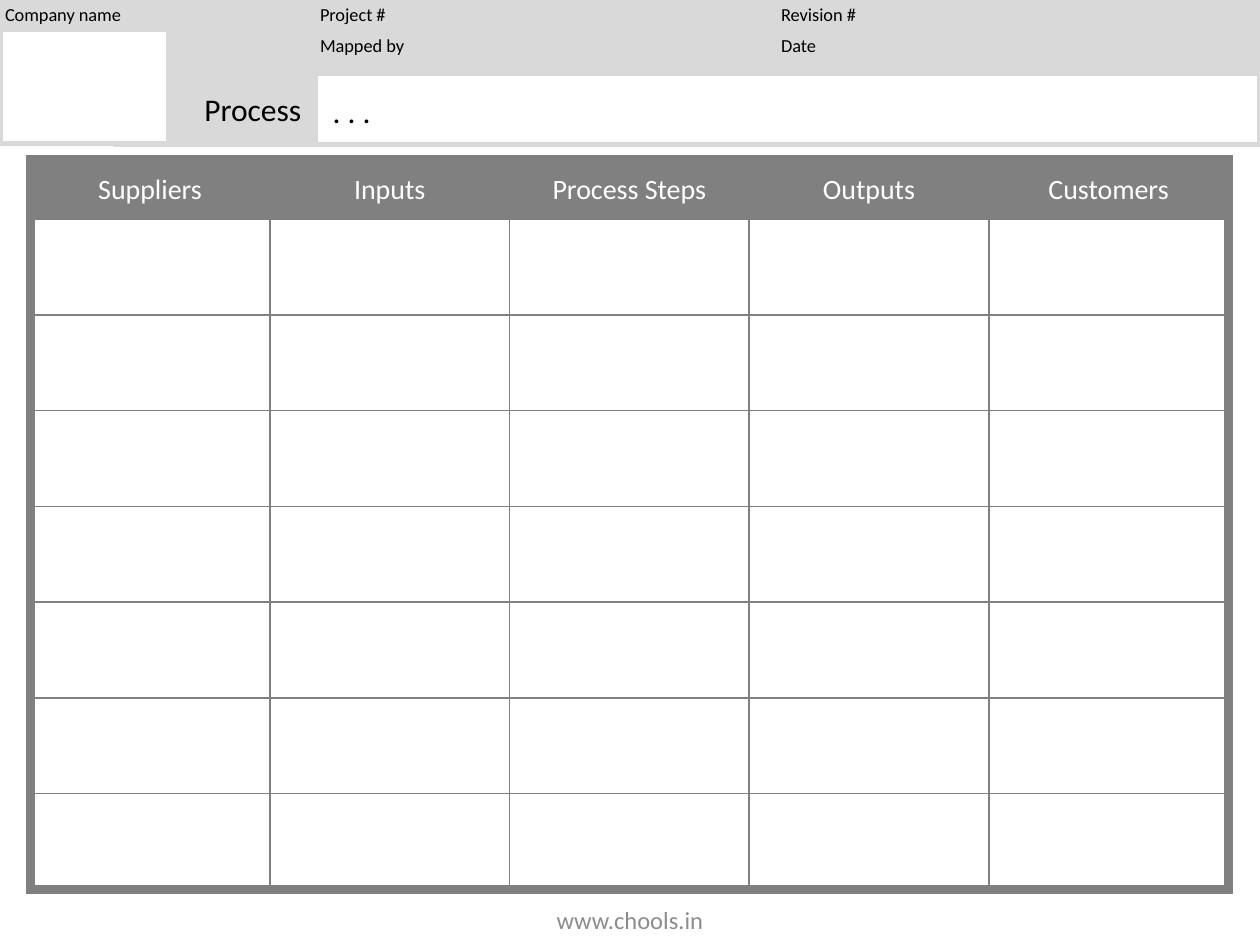
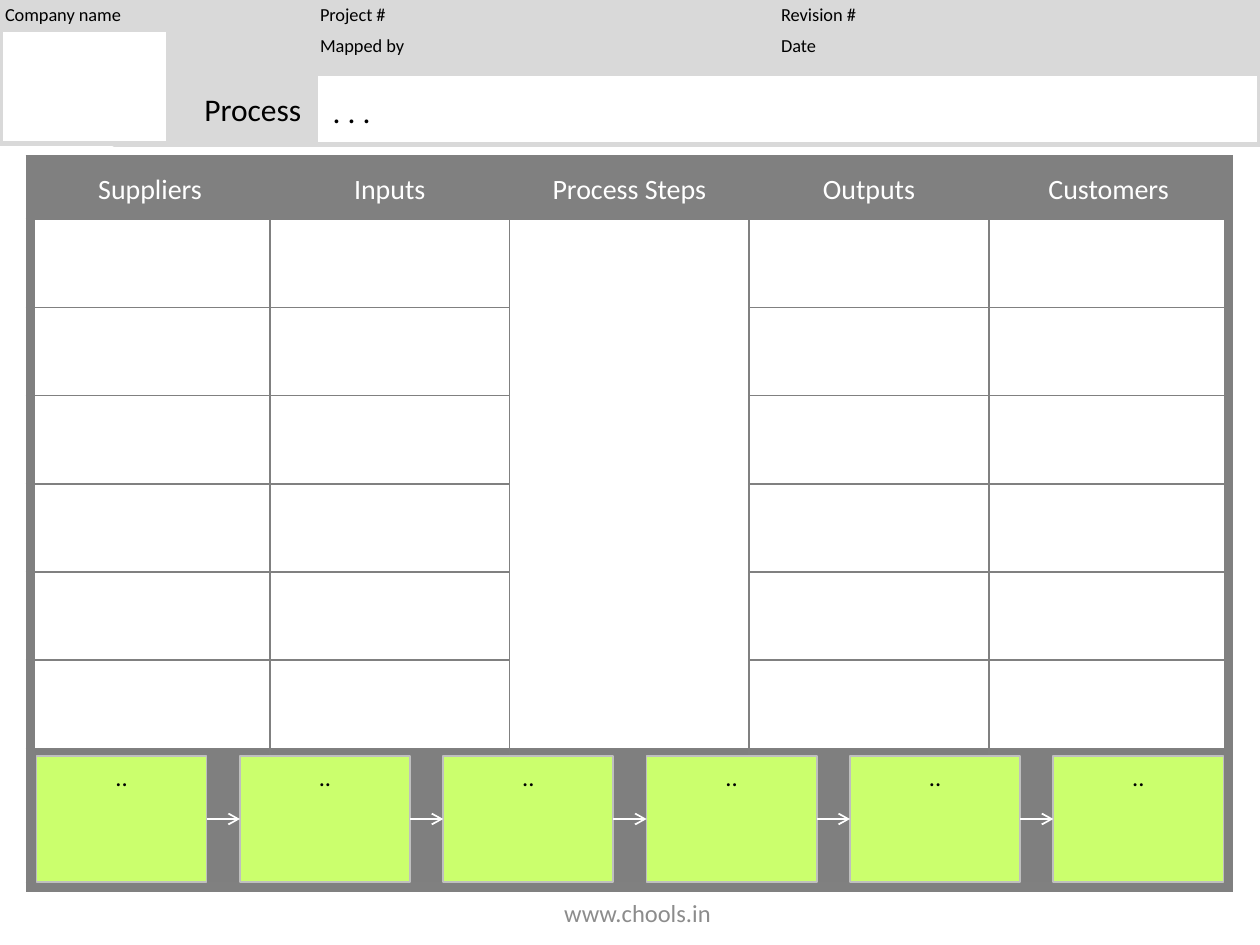
from lxml import etree
from pptx import Presentation
from pptx.dml.color import RGBColor
from pptx.enum.shapes import MSO_CONNECTOR, MSO_SHAPE
from pptx.enum.text import MSO_ANCHOR, MSO_AUTO_SIZE, PP_ALIGN
from pptx.oxml.ns import qn
from pptx.util import Inches, Pt

RECTANGLE = MSO_SHAPE.RECTANGLE
STRAIGHT = MSO_CONNECTOR.STRAIGHT
TOP, MIDDLE = MSO_ANCHOR.TOP, MSO_ANCHOR.MIDDLE
LEFT, CENTER, RIGHT = PP_ALIGN.LEFT, PP_ALIGN.CENTER, PP_ALIGN.RIGHT
FIXED_SIZE = MSO_AUTO_SIZE.NONE

FONT = "Calibri"
BLACK = RGBColor(0x00, 0x00, 0x00)
WHITE = RGBColor(0xFF, 0xFF, 0xFF)
BAND_GRAY = RGBColor(0xD9, 0xD9, 0xD9)
GRID_GRAY = RGBColor(0x80, 0x80, 0x80)
STRIP_GRAY = RGBColor(0x7F, 0x7F, 0x7F)
FOOTER_GRAY = RGBColor(0x8C, 0x8C, 0x8C)
STEP_GREEN = RGBColor(0xCB, 0xFF, 0x6D)
STEP_EDGE = RGBColor(0xBF, 0xBF, 0xBF)

COLUMNS = ["Suppliers", "Inputs", "Process Steps", "Outputs", "Customers"]
PROCESS_LABEL = "Process"
PROCESS_NAME = ". . ."
FOOTER = "www.chools.in"
STEPS = [".."] * 6
HEADER_FIELDS = [
    ("Company name", 0, 0),
    ("Project #", 2.5, 0),
    ("Revision #", 6.16, 0),
    ("Mapped by", 2.5, 0.24),
    ("Date", 6.16, 0.24),
]
HEADER_BOXES = [
    ("", (0.91, 0.58, 1.58, 0.57), BAND_GRAY),
    ("", (0, 0, 10, 0.57), BAND_GRAY),
    ("", (0, 0.23, 1.34, 0.91), WHITE),
    ("", (2.5, 0.58, 7.5, 0.57), None),
]
HEADER_BOXES[0] = (PROCESS_LABEL,) + HEADER_BOXES[0][1:]

TABLE_LEFT, TABLE_TOP, TABLE_WIDTH = 0.24, 1.27, 9.51
HEADING_HEIGHT = 0.47
GRID_ROWS = [0.76] * 7
FLOW_ROWS = [0.7] * 6 + [1.1]
STEP_COLUMN = COLUMNS.index("Process Steps")

STEP_LEFT, STEP_TOP, STEP_WIDTH, STEP_HEIGHT = 0.29, 6, 1.35, 1
STEP_PITCH = (8.36 - STEP_LEFT) / (len(STEPS) - 1)


def place(left, top, width, height):
    return [Inches(length) for length in (left, top, width, height)]


def write(frame, text, size, color=BLACK, align=LEFT, anchor=MIDDLE):
    frame.word_wrap = True
    frame.vertical_anchor = anchor
    frame.text = text
    paragraph = frame.paragraphs[0]
    paragraph.alignment = align
    paragraph.font.name = FONT
    paragraph.font.size = Pt(size)
    paragraph.font.color.rgb = color


def add_box(slide, area, fill, line, line_width):
    box = slide.shapes.add_shape(RECTANGLE, *place(*area))
    box.shadow.inherit = False
    if fill is None:
        box.fill.background()
    else:
        box.fill.solid()
        box.fill.fore_color.rgb = fill
    box.line.color.rgb = line
    box.line.width = Pt(line_width)
    return box


def add_header(slide):
    for text, area, fill in HEADER_BOXES:
        box = add_box(slide, area, fill, BAND_GRAY, 3)
        if text:
            write(box.text_frame, text, 18, align=RIGHT)
    for text, left, top in HEADER_FIELDS:
        frame = slide.shapes.add_textbox(*place(left, top, 2.5, 0.23)).text_frame
        frame.margin_left = frame.margin_right = Inches(0.04)
        frame.margin_top = frame.margin_bottom = Inches(0.02)
        write(frame, text, 10.5)
    title = slide.shapes.title
    title.left, title.top, title.width, title.height = place(2.54, 0.68, 7.35, 0.4)
    title.text_frame.auto_size = FIXED_SIZE
    write(title.text_frame, PROCESS_NAME, 18, anchor=TOP)


def add_footer(slide, left, top):
    footer = slide.shapes.add_textbox(*place(left, top, 3.38, 0.4))
    write(footer.text_frame, FOOTER, 14, FOOTER_GRAY, CENTER)


def set_borders(cell, widths):
    properties = cell._tc.get_or_add_tcPr()
    for side, width in zip("LRTB", widths):
        line = etree.SubElement(properties, qn(f"a:ln{side}"), w=str(Pt(width)))
        fill = etree.SubElement(line, qn("a:solidFill"))
        etree.SubElement(fill, qn("a:srgbClr"), val=str(GRID_GRAY))


def add_sipoc_table(slide, body_rows, strip=False):
    heights = [HEADING_HEIGHT] + body_rows
    last_row, last_column = len(heights) - 1, len(COLUMNS) - 1
    area = place(TABLE_LEFT, TABLE_TOP, TABLE_WIDTH, sum(heights))
    table = slide.shapes.add_table(len(heights), len(COLUMNS), *area).table
    table.first_row = table.horz_banding = False
    for column in table.columns:
        column.width = Inches(TABLE_WIDTH / len(COLUMNS))
    for row_index, height in enumerate(heights):
        table.rows[row_index].height = Inches(height)
        for column_index, heading in enumerate(COLUMNS):
            cell = table.cell(row_index, column_index)
            on_edge = (column_index == 0, column_index == last_column,
                       row_index == 0, row_index == last_row)
            set_borders(cell, [6 if edge else 1 for edge in on_edge])
            cell.fill.solid()
            cell.fill.fore_color.rgb = WHITE
            if row_index == 0:
                cell.fill.fore_color.rgb = GRID_GRAY
                cell.margin_left = cell.margin_right = 0
                cell.margin_top = cell.margin_bottom = 0
                cell.vertical_anchor = MIDDLE
                write(cell.text_frame, heading, 16, WHITE, CENTER)
            elif strip and row_index == last_row:
                cell.fill.fore_color.rgb = STRIP_GRAY
    if strip:
        table.cell(1, STEP_COLUMN).merge(table.cell(last_row - 1, STEP_COLUMN))


def add_arrow(slide, source, target):
    arrow = slide.shapes.add_connector(STRAIGHT, 0, 0, 0, 0)
    arrow.begin_connect(source, 3)
    arrow.end_connect(target, 1)
    arrow.line.color.rgb = WHITE
    arrow.line.width = Pt(1)
    etree.SubElement(arrow.line._get_or_add_ln(), qn("a:tailEnd"), type="arrow")
    etree.SubElement(arrow._element.spPr, qn("a:effectLst"))


def add_step_flow(slide):
    boxes = []
    for index, text in enumerate(STEPS):
        left = STEP_LEFT + index * STEP_PITCH
        area = (left, STEP_TOP, STEP_WIDTH, STEP_HEIGHT)
        box = add_box(slide, area, STEP_GREEN, STEP_EDGE, 1)
        write(box.text_frame, text, 14, align=CENTER, anchor=TOP)
        boxes.append(box)
    for source, target in zip(boxes, boxes[1:]):
        add_arrow(slide, source, target)


def add_sipoc_slide(presentation):
    slide = presentation.slides.add_slide(presentation.slide_layouts[5])
    add_header(slide)
    return slide


def main():
    presentation = Presentation()
    presentation.slide_width = Inches(10)
    presentation.slide_height = Inches(7.5)

    grid_slide = add_sipoc_slide(presentation)
    add_sipoc_table(grid_slide, GRID_ROWS)
    add_footer(grid_slide, 3.31, 7.1)

    flow_slide = add_sipoc_slide(presentation)
    add_sipoc_table(flow_slide, FLOW_ROWS, strip=True)
    add_step_flow(flow_slide)
    add_footer(flow_slide, 3.37, 7.04)

    presentation.save("out.pptx")


if __name__ == "__main__":
    main()
